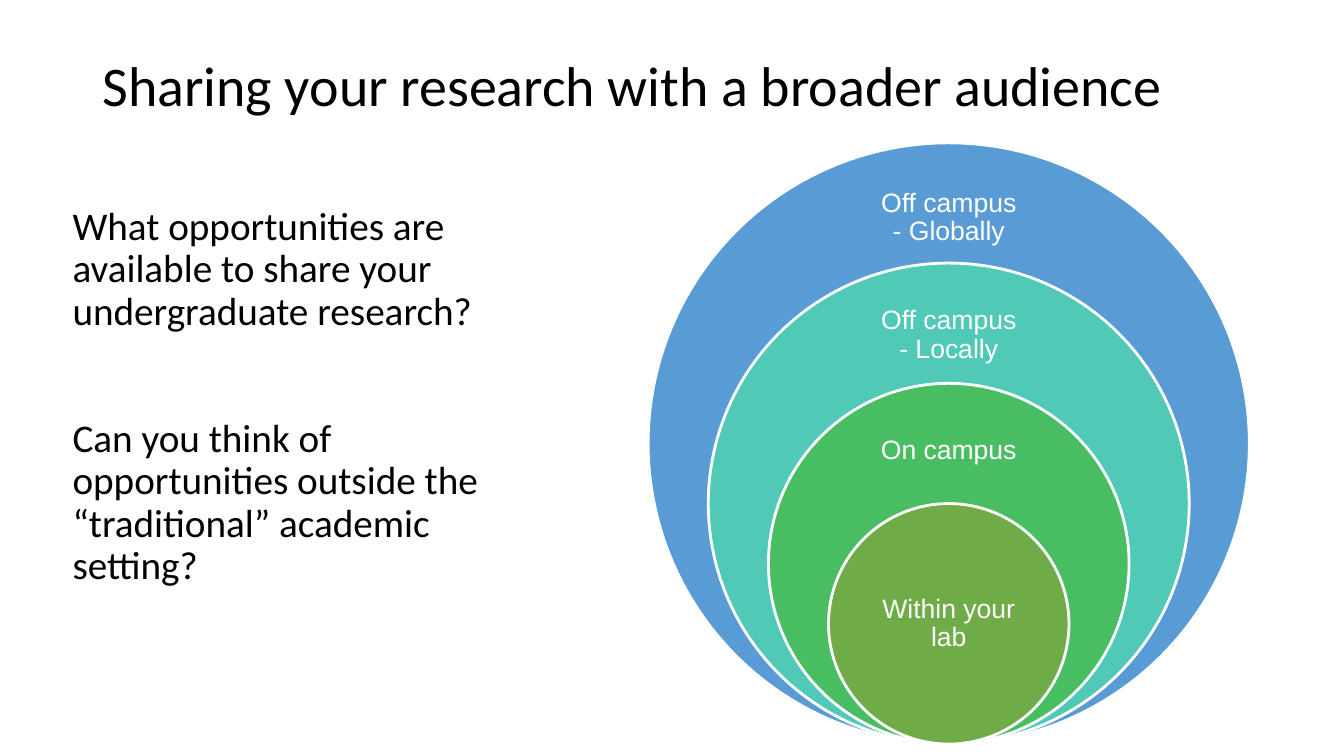
from pptx import Presentation
from pptx.dml.color import RGBColor
from pptx.enum.shapes import MSO_SHAPE
from pptx.enum.text import MSO_ANCHOR, PP_ALIGN
from pptx.util import Cm, Pt

OVAL = MSO_SHAPE.OVAL
TOP, MIDDLE = MSO_ANCHOR.TOP, MSO_ANCHOR.MIDDLE
LEFT, CENTER = PP_ALIGN.LEFT, PP_ALIGN.CENTER

TITLE = "Sharing your research with a broader audience"
PROMPTS = [
    "What opportunities are available to share your undergraduate research?",
    "Can you think of opportunities outside the “traditional” academic setting?",
]
# Label, fill, diameter in units, label top and height as shares of diameter
RINGS = [
    ("Off campus - Globally", "599BD5", 5, 0.05, 0.15),
    ("Off campus - Locally", "50C9B6", 4, 0.06, 0.18),
    ("On campus", "48BD62", 3, 0.075, 0.225),
    ("Within your lab", "6FAB46", 2, 0.25, 0.5),
]
UNIT = 3.03
AXIS = 23.91
BASE = 18.75
LABEL = 4.25


def color(code):
    return RGBColor.from_string(code)


class Board:
    """Holds the current slide and its text style."""

    head, body = "Calibri", "Arial"
    dark, light = "000000", "FFFFFF"

    def __init__(self, slide):
        self.slide = slide

    def text(self, box, lines, size, font, ink, align=LEFT, anchor=TOP,
             pad=(0.25, 0.13), gap=0):
        """Add a text box; gap is the space in points between paragraphs."""
        frame = self.slide.shapes.add_textbox(*map(Cm, box)).text_frame
        frame.word_wrap = True
        frame.vertical_anchor = anchor
        frame.margin_left = frame.margin_right = Cm(pad[0])
        frame.margin_top = frame.margin_bottom = Cm(pad[1])
        frame.text = "\n".join(lines)
        for i, para in enumerate(frame.paragraphs):
            para.alignment = align
            para.line_spacing = 0.9
            para.space_before = Pt(gap if i else 0)
            for run in para.runs:
                run.font.name = font
                run.font.size = Pt(size)
                run.font.color.rgb = color(ink)

    def ring(self, label, fill, units, drop, share):
        """Add a circle resting on the common base, with its label."""
        size = units * UNIT
        top = BASE - size
        disc = self.slide.shapes.add_shape(
            OVAL, Cm(AXIS - size / 2), Cm(top), Cm(size), Cm(size))
        disc.shadow.inherit = False
        disc.fill.solid()
        disc.fill.fore_color.rgb = color(fill)
        disc.line.color.rgb = color(self.light)
        disc.line.width = Pt(2)
        box = (AXIS - LABEL / 2, top + drop * size, LABEL, share * size)
        self.text(box, [label], 19, self.body, self.light, CENTER, MIDDLE,
                  pad=(0.38, 0.38))


def main():
    deck = Presentation()
    deck.slide_width, deck.slide_height = Cm(33.87), Cm(19.05)
    board = Board(deck.slides.add_slide(deck.slide_layouts[6]))
    board.text((2.33, 1.01, 29.21, 2.46), [TITLE], 40, board.head, board.dark,
               anchor=MIDDLE)
    board.text((1.58, 5.08, 11.18, 12.09), PROMPTS, 28, board.head, board.dark,
               gap=60.5)
    for ring in RINGS:
        board.ring(*ring)
    deck.save("out.pptx")


if __name__ == "__main__":
    main()
